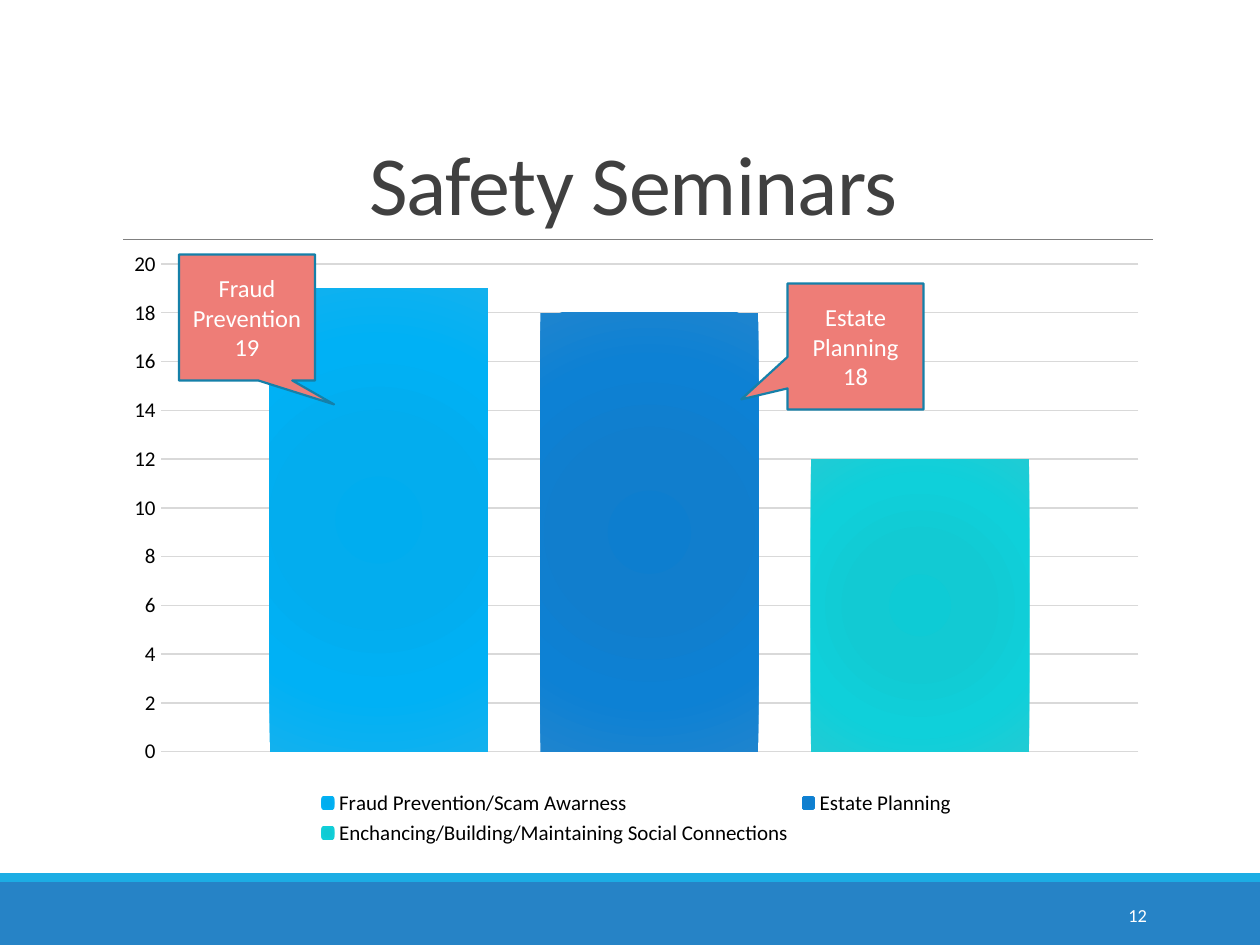
from lxml.etree import SubElement
from pptx import Presentation
from pptx.chart.data import CategoryChartData
from pptx.dml.color import RGBColor
from pptx.enum.chart import XL_CHART_TYPE, XL_LEGEND_POSITION, XL_TICK_MARK
from pptx.enum.shapes import MSO_CONNECTOR, MSO_SHAPE
from pptx.enum.text import MSO_ANCHOR, PP_ALIGN
from pptx.oxml.ns import qn
from pptx.util import Inches, Pt

FONT = "Calibri"
WHITE = RGBColor(0xFF, 0xFF, 0xFF)
BLACK = RGBColor(0x00, 0x00, 0x00)
TITLE_GRAY = RGBColor(0x40, 0x40, 0x40)
RULE_GRAY = RGBColor(0x80, 0x80, 0x80)
GRID_GRAY = RGBColor(0xD9, 0xD9, 0xD9)
FOOTER_BLUE = RGBColor(0x26, 0x83, 0xC6)
STRIPE_BLUE = RGBColor(0x1C, 0xAD, 0xE4)
CALLOUT_RED = RGBColor(0xEE, 0x7D, 0x77)
CALLOUT_EDGE = RGBColor(0x15, 0x80, 0xA9)

GRADIENT_POSITIONS = (0, 34, 70, 100)
SEMINARS = [
    ("Fraud Prevention/Scam Awarness", 19, ("00ADEF", "03ADEE", "00B1F5", "12B1EE")),
    ("Estate Planning", 18, ("0D7ECF", "117ECD", "0D81D4", "1E84CE")),
    ("Enchancing/Building/Maintaining Social Connections", 12,
     ("0ECBD5", "12CAD3", "0FD0DA", "20CBD4")),
]


class SlideBuilder:
    def __init__(self, slide):
        self.slide = slide
        self.shapes = slide.shapes

    def place(self, shape, left, top, width, height):
        shape.left, shape.top = Inches(left), Inches(top)
        shape.width, shape.height = Inches(width), Inches(height)

    def style_font(self, font, size, color):
        font.name = FONT
        font.size = Pt(size)
        font.color.rgb = color

    def set_text(self, text_frame, lines, size, color, alignment, anchor):
        text_frame.word_wrap = True
        text_frame.vertical_anchor = anchor
        text_frame.text = "\n".join(lines)
        for paragraph in text_frame.paragraphs:
            paragraph.alignment = alignment
            for run in paragraph.runs:
                self.style_font(run.font, size, color)

    def title(self, text, *box):
        title = self.shapes.title
        self.place(title, *box)
        self.set_text(title.text_frame, [text], 48, TITLE_GRAY, PP_ALIGN.CENTER, MSO_ANCHOR.BOTTOM)
        paragraph = title.text_frame.paragraphs[0]
        paragraph.line_spacing = 0.85
        paragraph.runs[0].font._element.set("spc", "-50")

    def shape(self, kind, fill, *box):
        shape = self.shapes.add_shape(kind, *map(Inches, box))
        shape.shadow.inherit = False
        shape.fill.solid()
        shape.fill.fore_color.rgb = fill
        shape.line.fill.background()
        return shape

    def callout(self, lines, tip, *box):
        callout = self.shape(MSO_SHAPE.RECTANGULAR_CALLOUT, CALLOUT_RED, *box)
        callout.line.color.rgb = CALLOUT_EDGE
        callout.line.width = Pt(1.25)
        callout.adjustments[0], callout.adjustments[1] = tip
        self.set_text(callout.text_frame, lines, 14, WHITE, PP_ALIGN.CENTER, MSO_ANCHOR.MIDDLE)

    def rule(self, *ends):
        rule = self.shapes.add_connector(MSO_CONNECTOR.STRAIGHT, *map(Inches, ends))
        rule.line.color.rgb = RULE_GRAY
        rule.line.width = Pt(0.5)
        SubElement(rule._element.spPr, qn("a:effectLst"))

    def page_number(self, text, *box):
        text_box = self.shapes.add_textbox(*map(Inches, box))
        self.set_text(text_box.text_frame, [text], 10.5, WHITE, PP_ALIGN.RIGHT, MSO_ANCHOR.MIDDLE)

    def radial_fill(self, fill, colors):
        fill.gradient()
        gradient = fill._fill._gradFill
        for child in list(gradient):
            gradient.remove(child)
        stops = SubElement(gradient, qn("a:gsLst"))
        for position, color in zip(GRADIENT_POSITIONS, colors):
            stop = SubElement(stops, qn("a:gs"), pos=str(position * 1000))
            SubElement(stop, qn("a:srgbClr"), val=color)
        circle = SubElement(gradient, qn("a:path"), path="circle")
        SubElement(circle, qn("a:fillToRect"), {side: "100000" for side in "ltrb"})

    def column_chart(self, seminars, *box):
        data = CategoryChartData()
        data.categories = ["1"]
        for name, count, _ in seminars:
            data.add_series(name, [count])
        chart = self.shapes.add_chart(
            XL_CHART_TYPE.COLUMN_CLUSTERED, *map(Inches, box), data).chart
        self.style_font(chart.font, 10, BLACK)
        chart.has_title = False
        chart.has_legend = True
        chart.legend.position = XL_LEGEND_POSITION.BOTTOM
        chart.legend.include_in_layout = False
        self.style_font(chart.legend.font, 12, BLACK)

        chart.category_axis.visible = False
        axis = chart.value_axis
        axis.minimum_scale, axis.maximum_scale, axis.major_unit = 0, 20, 2
        axis.major_tick_mark = axis.minor_tick_mark = XL_TICK_MARK.NONE
        axis.format.line.fill.background()
        axis.major_gridlines.format.line.color.rgb = GRID_GRAY
        axis.major_gridlines.format.line.width = Pt(0.75)
        self.style_font(axis.tick_labels.font, 12, BLACK)

        plot = chart.plots[0]
        plot.vary_by_categories = False
        plot.gap_width = 100
        plot.overlap = -24
        for series, (_, _, colors) in zip(plot.series, seminars):
            self.radial_fill(series.format.fill, colors)


def main():
    presentation = Presentation()
    presentation.slide_width = Inches(10)
    presentation.slide_height = Inches(7.5)
    builder = SlideBuilder(presentation.slides.add_slide(presentation.slide_layouts[5]))

    builder.shape(MSO_SHAPE.RECTANGLE, FOOTER_BLUE, 0, 7, 10, 0.5)
    builder.shape(MSO_SHAPE.RECTANGLE, STRIPE_BLUE, 0, 6.93, 10, 0.07)
    builder.rule(0.98, 1.9, 9.15, 1.9)
    builder.title("Safety Seminars", 0.9, 0.31, 8.25, 1.59)
    builder.page_number("12", 8.12, 7.06, 1.08, 0.4)
    builder.column_chart(SEMINARS, 0.9, 1.9, 8.3, 4.85)
    builder.callout(["Fraud Prevention", "19"], (0.64, 0.69), 1.42, 2.02, 1.08, 1)
    builder.callout(["Estate Planning", "18"], (-0.84, 0.42), 6.25, 2.25, 1.08, 1)

    presentation.save("out.pptx")


if __name__ == "__main__":
    main()
